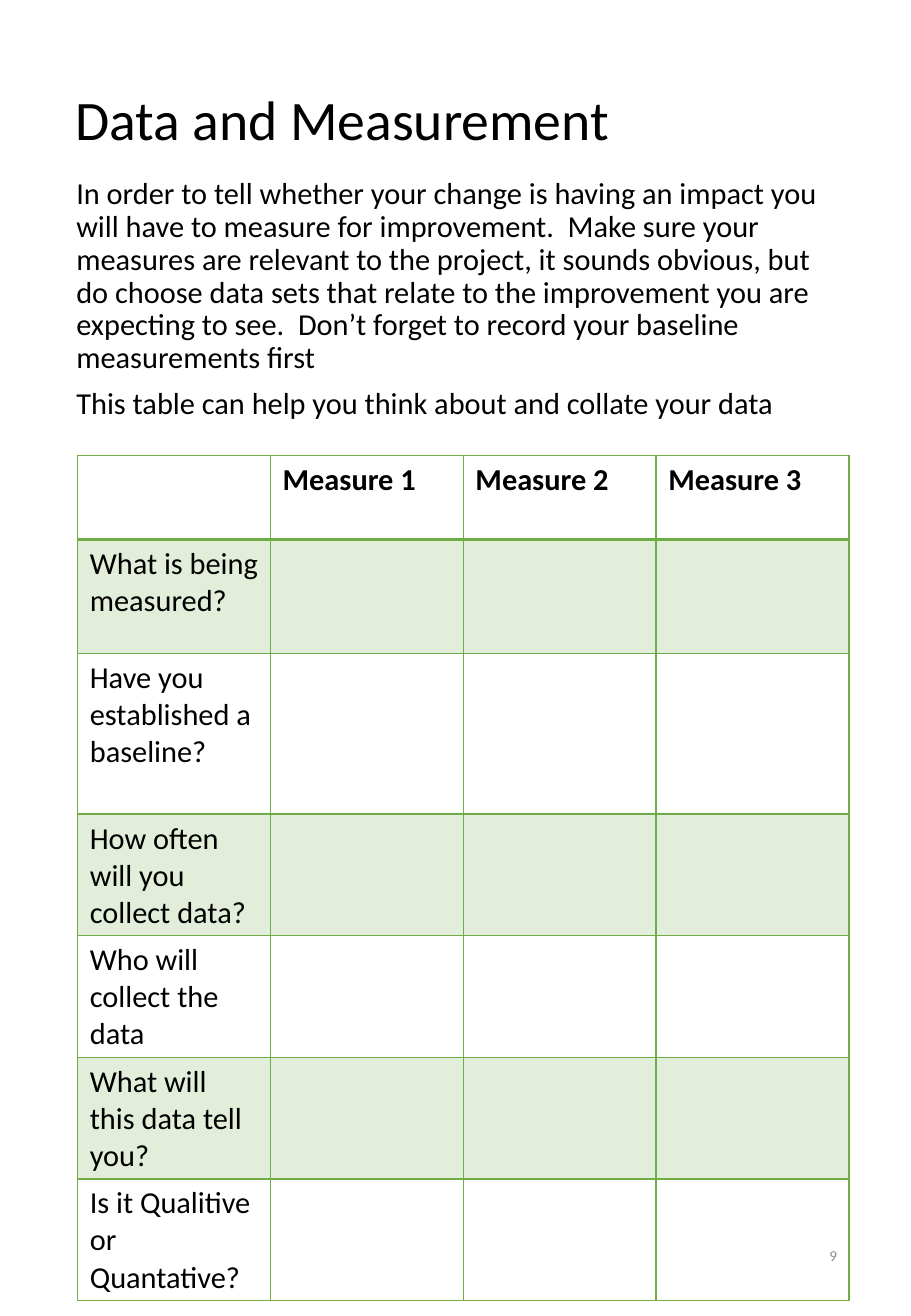
from lxml.etree import SubElement
from pptx import Presentation
from pptx.dml.color import RGBColor
from pptx.enum.text import MSO_ANCHOR as Anchor, PP_ALIGN as Align
from pptx.oxml.ns import qn
from pptx.util import Inches, Pt

PAGE_WIDTH, PAGE_HEIGHT = Inches(7.5), Inches(10.83)
BLACK = RGBColor(0x00, 0x00, 0x00)
GREY = RGBColor(0x8C, 0x8C, 0x8C)
GREEN = RGBColor(0x70, 0xAD, 0x47)
FONT = "Calibri"
BAND_OPACITY = 20

INTRODUCTION = [
    "In order to tell whether your change is having an impact you will have to "
    "measure for improvement.  Make sure your measures are relevant to the project, "
    "it sounds obvious, but do choose data sets that relate to the improvement you "
    "are expecting to see.  Don’t forget to record your baseline measurements first",
    "This table can help you think about and collate your data",
]
MEASURES = ["", "Measure 1", "Measure 2", "Measure 3"]
# Each question with its row height, in percent of the page height
QUESTIONS = [
    ("What is being measured?", 8.68),
    ("Have you established a baseline?", 12.19),
    ("How often will you collect data?", 8.68),
    ("Who will collect the data", 8.68),
    ("What will this data tell you?", 8.68),
    ("Is it Qualitive or Quantative?", 8.68),
]
HEADER_HEIGHT = 6.37


def across(percent):
    return round(PAGE_WIDTH * percent / 100)


def down(percent):
    return round(PAGE_HEIGHT * percent / 100)


def write(frame, paragraphs, size=18, color=BLACK, bold=False,
          align=Align.LEFT, line_spacing=None, gap=0):
    """Fill a text frame, with gap points between its paragraphs."""
    for index, text in enumerate(paragraphs):
        para = frame.add_paragraph() if index else frame.paragraphs[0]
        para.text = text
        para.alignment = align
        para.line_spacing = line_spacing
        para.space_before = Pt(gap if index else 0)
        para.font.name = FONT
        para.font.size = Pt(size)
        para.font.bold = bold
        para.font.color.rgb = color


def add_text(page, left, top, width, height, paragraphs, anchor=Anchor.MIDDLE, **style):
    box = page.shapes.add_textbox(across(left), down(top), across(width), down(height))
    box.text_frame.word_wrap = True
    box.text_frame.vertical_anchor = anchor
    write(box.text_frame, paragraphs, **style)


def set_borders(cell, top=1, bottom=1):
    properties = cell._tc.get_or_add_tcPr()
    for side, points in (("L", 1), ("R", 1), ("T", top), ("B", bottom)):
        line = SubElement(properties, qn(f"a:ln{side}"), w=str(Pt(points)))
        fill = SubElement(line, qn("a:solidFill"))
        SubElement(fill, qn("a:srgbClr"), val=str(GREEN))


def set_band(cell, banded):
    if not banded:
        cell.fill.background()
        return
    cell.fill.solid()
    cell.fill.fore_color.rgb = GREEN
    color = cell._tc.tcPr.find(f"{qn('a:solidFill')}/{qn('a:srgbClr')}")
    SubElement(color, qn("a:alpha"), val=str(BAND_OPACITY * 1000))


def add_measure_table(page, left, top, width):
    heights = [HEADER_HEIGHT] + [height for _, height in QUESTIONS]
    blanks = [""] * (len(MEASURES) - 1)
    rows = [MEASURES] + [[question] + blanks for question, _ in QUESTIONS]
    table = page.shapes.add_table(len(rows), len(MEASURES), across(left), down(top),
                                  across(width), down(sum(heights))).table
    for column in table.columns:
        column.width = across(width / len(MEASURES))
    for index, (texts, height) in enumerate(zip(rows, heights)):
        table.rows[index].height = down(height)
        for cell, text in zip(table.rows[index].cells, texts):
            write(cell.text_frame, [text], bold=index == 0)
            set_borders(cell, top=2 if index == 1 else 1, bottom=2 if index == 0 else 1)
            set_band(cell, banded=index % 2 == 1)


def main():
    deck = Presentation()
    deck.slide_width, deck.slide_height = PAGE_WIDTH, PAGE_HEIGHT
    page = deck.slides.add_slide(deck.slide_layouts[6])
    add_text(page, 6.93, 5.36, 86.27, 7.85, ["Data and Measurement"],
             size=33, line_spacing=0.9)
    add_text(page, 7.07, 13.11, 86.27, 19.76, INTRODUCTION,
             anchor=Anchor.TOP, line_spacing=0.9, gap=7.5)
    add_measure_table(page, 8.53, 34.63, 84.67)
    add_text(page, 70.67, 92.71, 22.53, 5.36, ["9"],
             size=9, color=GREY, align=Align.RIGHT)
    deck.save("out.pptx")


if __name__ == "__main__":
    main()
